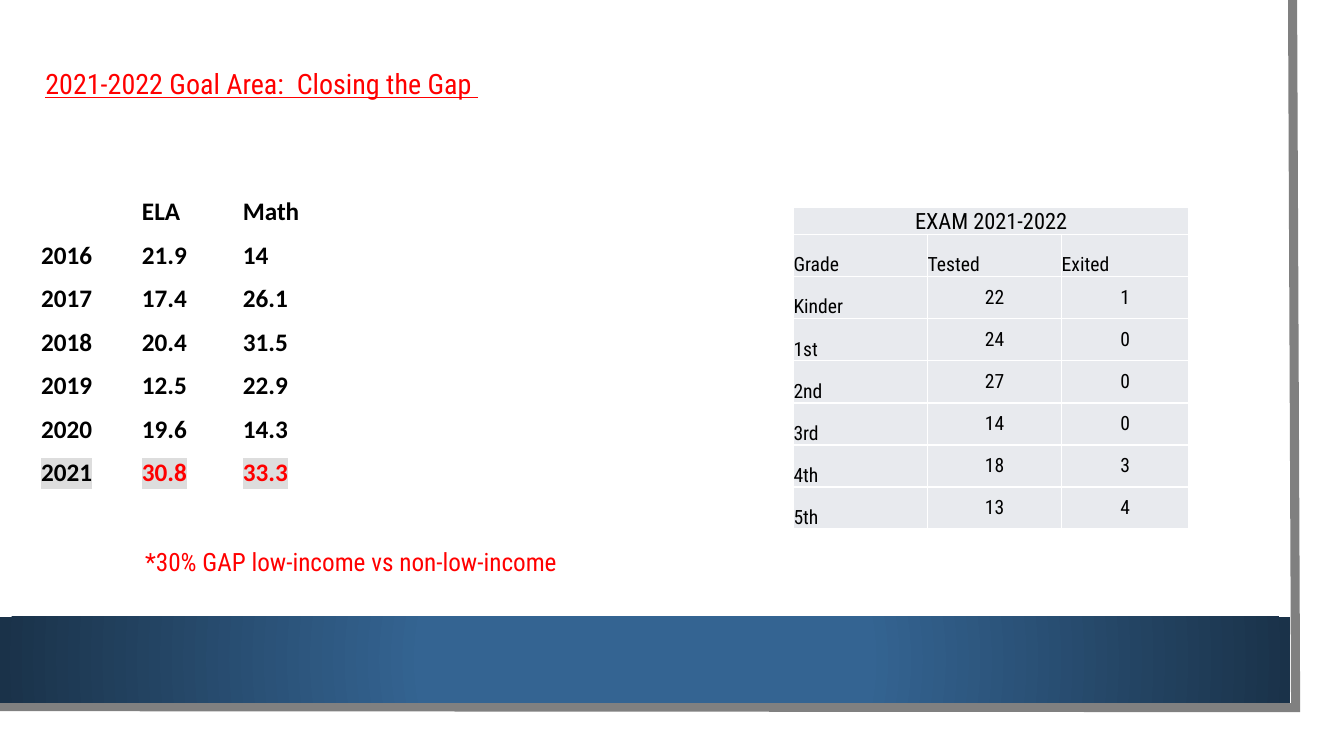
from lxml import etree
from pptx import Presentation, util as u
from pptx.dml.color import RGBColor
from pptx.enum import shapes, text
from pptx.oxml import parse_xml
from pptx.oxml.ns import nsdecls, qn

# Content
TITLE = "2021-2022 Goal Area:  Closing the Gap "
SCORES = [
    ("", "ELA", "Math"),
    ("2016", "21.9", "14"),
    ("2017", "17.4", "26.1"),
    ("2018", "20.4", "31.5"),
    ("2019", "12.5", "22.9"),
    ("2020", "19.6", "14.3"),
]
LATEST_YEAR, LATEST_SCORES = "2021", ("30.8", "33.3")
NOTE = "*30% GAP low-income vs non-low-income"
EXAM_TITLE = "EXAM 2021-2022"
EXAM_ROWS = [
    ("Grade", "Tested", "Exited"),
    ("Kinder", "22", "1"),
    ("1st", "24", "0"),
    ("2nd", "27", "0"),
    ("3rd", "14", "0"),
    ("4th", "18", "3"),
    ("5th", "13", "4"),
]


class Theme:
    heading_font, score_font = "Roboto Condensed", "Calibri"
    red, black, white = "FF0000", "000000", "FFFFFF"
    highlight, cell, frame = "DDDDDD", "E8EAEE", "808080"
    band_center, band_edge = "346492", "1A3249"
    title_size, body_size, table_title_size, table_size = 20, 18, 16, 14


def style(font, name, size, color, bold=False):
    font.name, font.size, font.bold = name, u.Pt(size), bold
    font.color.rgb = RGBColor.from_string(color)


def prepare(shape, left, top, width, height):
    shape.left, shape.top = u.Inches(left), u.Inches(top)
    shape.width, shape.height = u.Inches(width), u.Inches(height)
    frame = shape.text_frame
    frame.word_wrap = True
    frame.auto_size = text.MSO_AUTO_SIZE.SHAPE_TO_FIT_TEXT
    frame.vertical_anchor = text.MSO_ANCHOR.TOP
    return frame


def add_text_box(slide, *box):
    return prepare(slide.shapes.add_textbox(0, 0, 0, 0), *box)


def add_frame(slide):
    builder = slide.shapes.build_freeform(u.Inches(12.82), 0)
    corners = [(12.85, 7.02), (-0.03, 7.01)]
    builder.add_line_segments([(u.Inches(x), u.Inches(y)) for x, y in corners], close=False)
    shape = builder.convert_to_shape()
    shape.shadow.inherit = False
    shape.fill.background()
    shape.line.color.rgb = RGBColor.from_string(Theme.frame)
    shape.line.width = u.Pt(6.5)
    line = shape._element.spPr.find(qn("a:ln"))
    etree.SubElement(line, qn("a:miter"), lim="800000")


def add_band(slide):
    band = slide.shapes.add_shape(shapes.MSO_SHAPE.RECTANGLE, 0, u.Inches(6.12),
                                  u.Inches(12.8), u.Inches(0.85))
    band.shadow.inherit = False
    band.line.fill.background()
    stops = "".join(f'<a:gs pos="{position}"><a:srgbClr val="{color}"/></a:gs>'
                    for position, color in [(34000, Theme.band_center), (100000, Theme.band_edge)])
    gradient = parse_xml(
        f'<a:gradFill {nsdecls("a")} rotWithShape="1"><a:gsLst>{stops}</a:gsLst><a:path path="circle">'
        '<a:fillToRect l="50000" t="50000" r="50000" b="50000"/></a:path></a:gradFill>')
    band._element.spPr.find(qn("a:prstGeom")).addnext(gradient)


def add_scores(slide):
    frame = add_text_box(slide, 0.31, 1.87, 3.99, 3.03)
    frame.text = "\n".join("\t".join(row) for row in SCORES + [(LATEST_YEAR, "")])
    latest = frame.paragraphs[-1]
    latest.add_run().text = "\t".join(LATEST_SCORES)
    for paragraph in frame.paragraphs:
        tabs = etree.SubElement(paragraph._p.get_or_add_pPr(), qn("a:tabLst"))
        for inches in (1, 2):
            etree.SubElement(tabs, qn("a:tab"), pos=str(u.Inches(inches)), algn="l")
        paragraph.line_spacing, paragraph.space_after = 1.07, u.Pt(8)
        for run in paragraph.runs:
            style(run.font, Theme.score_font, Theme.body_size, Theme.black, bold=True)
    latest.runs[-1].font.color.rgb = RGBColor.from_string(Theme.red)
    for run in latest.runs:
        highlight = parse_xml(f'<a:highlight {nsdecls("a")}>'
                              f'<a:srgbClr val="{Theme.highlight}"/></a:highlight>')
        run._r.rPr.find(qn("a:solidFill")).addnext(highlight)


def fill_cell(cell, value, size, centered, anchor):
    cell.text = value
    cell.margin_left = cell.margin_right = cell.margin_top = cell.margin_bottom = 0
    cell.vertical_anchor = anchor
    paragraph = cell.text_frame.paragraphs[0]
    paragraph.alignment = text.PP_ALIGN.CENTER if centered else text.PP_ALIGN.LEFT
    for run in paragraph.runs:
        style(run.font, Theme.heading_font, size, Theme.black)
    for side in "LRTB":
        cell._tc.get_or_add_tcPr().append(parse_xml(
            f'<a:ln{side} {nsdecls("a")} w="{u.Pt(1)}"><a:solidFill>'
            f'<a:srgbClr val="{Theme.white}"/></a:solidFill></a:ln{side}>'))
    cell.fill.solid()
    cell.fill.fore_color.rgb = RGBColor.from_string(Theme.cell)


def add_exam_table(slide):
    rows = [(EXAM_TITLE, "", "")] + EXAM_ROWS
    height, title_height = u.Inches(3.19), u.Inches(0.27)
    row_height = (height - title_height) // len(EXAM_ROWS)
    table = slide.shapes.add_table(len(rows), 3, u.Inches(7.87), u.Inches(2.06),
                                   u.Inches(3.92), height).table
    table.first_row = table.horz_banding = False
    for column, width in zip(table.columns, (1.33, 1.33, 1.26)):
        column.width = u.Inches(width)
    for r, values in enumerate(rows):
        table.rows[r].height = row_height if r else title_height
        for c, value in enumerate(values):
            is_number = r > 1 and c > 0
            fill_cell(table.cell(r, c), value,
                      Theme.table_size if r else Theme.table_title_size,
                      is_number or r == 0,
                      text.MSO_ANCHOR.MIDDLE if is_number else text.MSO_ANCHOR.BOTTOM)
    table.cell(0, 0).merge(table.cell(0, 2))


def main():
    presentation = Presentation()
    presentation.slide_width, presentation.slide_height = u.Inches(13.33), u.Inches(7.5)
    slide = presentation.slides.add_slide(presentation.slide_layouts[5])

    # Frame and bottom band
    add_frame(slide)
    add_band(slide)

    # Title
    frame = prepare(slide.shapes.title, 0.35, 0.56, 11.7, 0.45)
    frame.text = TITLE
    paragraph = frame.paragraphs[0]
    paragraph.alignment = text.PP_ALIGN.LEFT
    paragraph.line_spacing, paragraph.space_after = 1.15, u.Pt(10)
    title_font = paragraph.runs[0].font
    style(title_font, Theme.heading_font, Theme.title_size, Theme.red)
    title_font.underline = True

    # Scores, table and note
    add_scores(slide)
    add_exam_table(slide)
    frame = add_text_box(slide, 1.34, 5.37, 4.68, 0.4)
    frame.text = NOTE
    style(frame.paragraphs[0].runs[0].font, Theme.heading_font, Theme.body_size, Theme.red)

    presentation.save("out.pptx")


if __name__ == "__main__":
    main()
